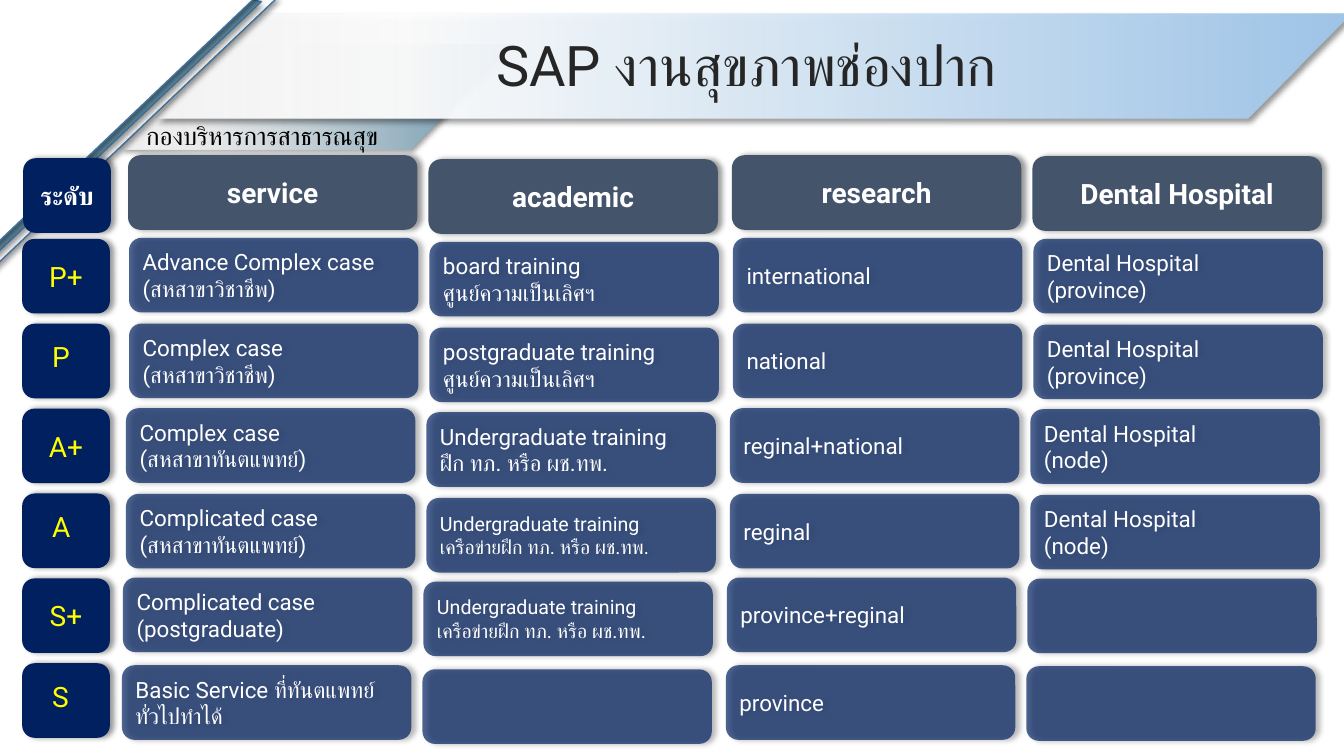
from dataclasses import dataclass

from lxml import etree
from pptx import Presentation
from pptx.dml.color import RGBColor
from pptx.enum.shapes import MSO_SHAPE as SHAPE
from pptx.enum.text import MSO_ANCHOR as ANCHOR, PP_ALIGN as ALIGN
from pptx.oxml import parse_xml
from pptx.oxml.ns import nsdecls, qn
from pptx.util import Inches, Pt


@dataclass(frozen=True)
class Theme:
    font: str = "Roboto"
    label_font: str = "Arial"
    navy: str = "002060"
    slate: str = "44546A"
    steel: str = "628FA6"
    sky: str = "9DC3E6"
    pale: str = "F2F2F2"
    mist: str = "F8FAF9"
    edge: str = "43739E"
    white: str = "FFFFFF"
    yellow: str = "FFFF00"
    ink: str = "262626"
    black: str = "000000"
    title: int = 40
    heading: int = 20
    label: int = 18
    body: int = 16
    small: int = 14
    cell_alpha: int = 69


T = Theme()

HEADINGS = ["service", "academic", "research", "Dental Hospital"]
LEVELS = ["P+", "P", "A+", "A", "S+", "S"]
ROWS = [
    ["Advance Complex case\n(สหสาขาวิชาชีพ)", "board training\nศูนย์ความเป็นเลิศฯ",
     "international", "Dental Hospital\n(province)"],
    ["Complex case\n(สหสาขาวิชาชีพ)", "postgraduate training\nศูนย์ความเป็นเลิศฯ",
     "national", "Dental Hospital\n(province)"],
    ["Complex case\n(สหสาขาทันตแพทย์)", "Undergraduate training\nฝึก ทภ. หรือ ผช.ทพ.",
     "reginal+national", "Dental Hospital\n(node)"],
    ["Complicated case\n(สหสาขาทันตแพทย์)", "Undergraduate training\nเครือข่ายฝึก ทภ. หรือ ผช.ทพ.",
     "reginal", "Dental Hospital\n(node)"],
    ["Complicated case\n(postgraduate)", "Undergraduate training\nเครือข่ายฝึก ทภ. หรือ ผช.ทพ.",
     "province+reginal", ""],
    ["Basic Service ที่ทันตแพทย์ทั่วไปทำได้", "", "province", ""],
]

# Grid measures, in inches from the grid's corner
CELL_W, LEVEL_W, CELL_H = 2.87, 0.87, 0.74
COLUMN_X = [1.06, 4.04, 7.05, 10.03]
COLUMN_DROP = [0, 0.04, 0, 0.01]
ROW_Y = [0.82, 1.67, 2.51, 3.36, 4.19, 5.06]
ROW_SHIFT = [0, 0, -0.03, -0.03, -0.06, -0.07]
LEVEL_Y, LEVEL_PITCH = 0.83, 0.842


def add_shadow(sp, angle):
    sp.shadow.inherit = False
    effects = sp._element.spPr.find(qn("a:effectLst"))
    effects.append(parse_xml(
        f'<a:outerShdw {nsdecls("a")} blurRad="{Pt(4)}" dist="{Pt(3)}" '
        f'dir="{angle * 60000}" algn="tl" rotWithShape="0">'
        f'<a:srgbClr val="{T.black}"><a:alpha val="40000"/></a:srgbClr></a:outerShdw>'))


def add_block(slide, kind, box, color=None, alpha=100, angle=0):
    sp = slide.shapes.add_shape(kind, *map(Inches, box))
    sp.line.fill.background()
    if color:
        sp.fill.solid()
        sp.fill.fore_color.rgb = RGBColor.from_string(color)
    if alpha < 100:
        clr = sp._element.spPr.find(qn("a:solidFill"))[0]
        etree.SubElement(clr, qn("a:alpha"), val=str(alpha * 1000))
    add_shadow(sp, angle)
    return sp


def write(sp, text, size, color, align=ALIGN.LEFT, bold=False, font=T.font,
          anchor=ANCHOR.MIDDLE):
    tf = sp.text_frame
    tf.word_wrap = True
    tf.vertical_anchor = anchor
    for i, line in enumerate(text.split("\n")):
        p = tf.add_paragraph() if i else tf.paragraphs[0]
        p.text = line
        p.alignment = align
        p.font.name, p.font.size, p.font.bold = font, Pt(size), bold
        p.font.color.rgb = RGBColor.from_string(color)
    return tf


def add_text(slide, box, text, size, color, **style):
    return write(slide.shapes.add_textbox(*map(Inches, box)), text, size, color, **style)


def add_band(slide, box, stops):
    """Slanted band with a left-to-right gradient of (percent, color, alpha)."""
    sp = add_block(slide, SHAPE.PARALLELOGRAM, box, angle=45)
    sp.adjustments[0] = 0.992
    sp.fill.gradient()
    sp.fill.gradient_angle = 0
    gs_list = sp._element.spPr.find(qn("a:gradFill")).find(qn("a:gsLst"))
    for gs in list(gs_list):
        gs_list.remove(gs)
    for pos, color, alpha in stops:
        gs = etree.SubElement(gs_list, qn("a:gs"), pos=str(pos * 1000))
        clr = etree.SubElement(gs, qn("a:srgbClr"), val=color)
        etree.SubElement(clr, qn("a:alpha"), val=str(alpha * 1000))


def add_header(slide, x, y):
    # Bands
    add_band(slide, (x + 1.19, y + 0.44, 3.91, 1.04),
             [(0, T.pale, 100), (19, T.white, 75), (100, T.steel, 100)])
    add_band(slide, (x + 1.54, y + 0.14, 11.86, 1.04),
             [(0, T.pale, 100), (21, T.white, 94), (100, T.sky, 100)])

    # Layered corner triangles
    for dx, dy, color in [(-1.08, -1.42, T.mist), (-1.25, -1.37, T.steel),
                          (-1.08, -1.63, T.white)]:
        sp = add_block(slide, SHAPE.ISOSCELES_TRIANGLE, (x + dx, y + dy, 4, 3.83),
                       color, angle=90)
        sp.rotation = 74
        sp.line.color.rgb = RGBColor.from_string(T.edge)
        sp.line.width = Pt(1)

    # Division name and title
    add_text(slide, (x + 1.09, y + 1.14, 3.02, 0.4), "กองบริหารการสาธารณสุข",
             T.label, T.black, align=ALIGN.CENTER, font=T.label_font, anchor=ANCHOR.TOP)
    tf = add_text(slide, (x + 1.92, y + 0.28, 10.96, 0.79), "SAP งานสุขภาพช่องปาก",
                  T.title, T.ink, align=ALIGN.CENTER)
    tf.paragraphs[0].line_spacing = 0.9


def add_levels(slide, x, y):
    sp = add_block(slide, SHAPE.ROUNDED_RECTANGLE, (x + 0.01, y + 0.03, LEVEL_W, CELL_H), T.navy)
    write(sp, "ระดับ", T.label, T.white, align=ALIGN.CENTER, bold=True)
    for i, level in enumerate(LEVELS):
        top = y + LEVEL_Y + i * LEVEL_PITCH
        sp = add_block(slide, SHAPE.ROUNDED_RECTANGLE, (x, top, LEVEL_W, CELL_H), T.navy)
        if level.endswith("+"):
            write(sp, level, T.heading, T.yellow, align=ALIGN.CENTER)
        else:
            add_text(slide, (x + 0.2, top + 0.11, 0.44, 0.44), level,
                     T.heading, T.yellow, anchor=ANCHOR.TOP)


def add_column(slide, x, y, heading, cells):
    for text, dy, dx in zip(cells, ROW_Y, ROW_SHIFT):
        sp = add_block(slide, SHAPE.ROUNDED_RECTANGLE, (x + dx, y + dy, CELL_W, CELL_H),
                       T.navy, T.cell_alpha)
        if text:
            size = T.small if "เครือข่าย" in text else T.body
            write(sp, text, size, T.white)
    sp = add_block(slide, SHAPE.ROUNDED_RECTANGLE, (x - 0.01, y, CELL_W, CELL_H), T.slate)
    write(sp, heading, T.heading, T.white, align=ALIGN.CENTER, bold=True)


def add_grid(slide, x, y):
    add_levels(slide, x, y)
    for dx, drop, heading, cells in zip(COLUMN_X, COLUMN_DROP, HEADINGS, zip(*ROWS)):
        add_column(slide, x + dx, y + drop, heading, cells)


def main():
    prs = Presentation()
    prs.slide_width, prs.slide_height = Inches(13.33), Inches(7.5)
    slide = prs.slides.add_slide(prs.slide_layouts[6])
    add_header(slide, 0, 0)
    add_grid(slide, 0.22, 1.54)
    prs.save("out.pptx")


if __name__ == "__main__":
    main()
